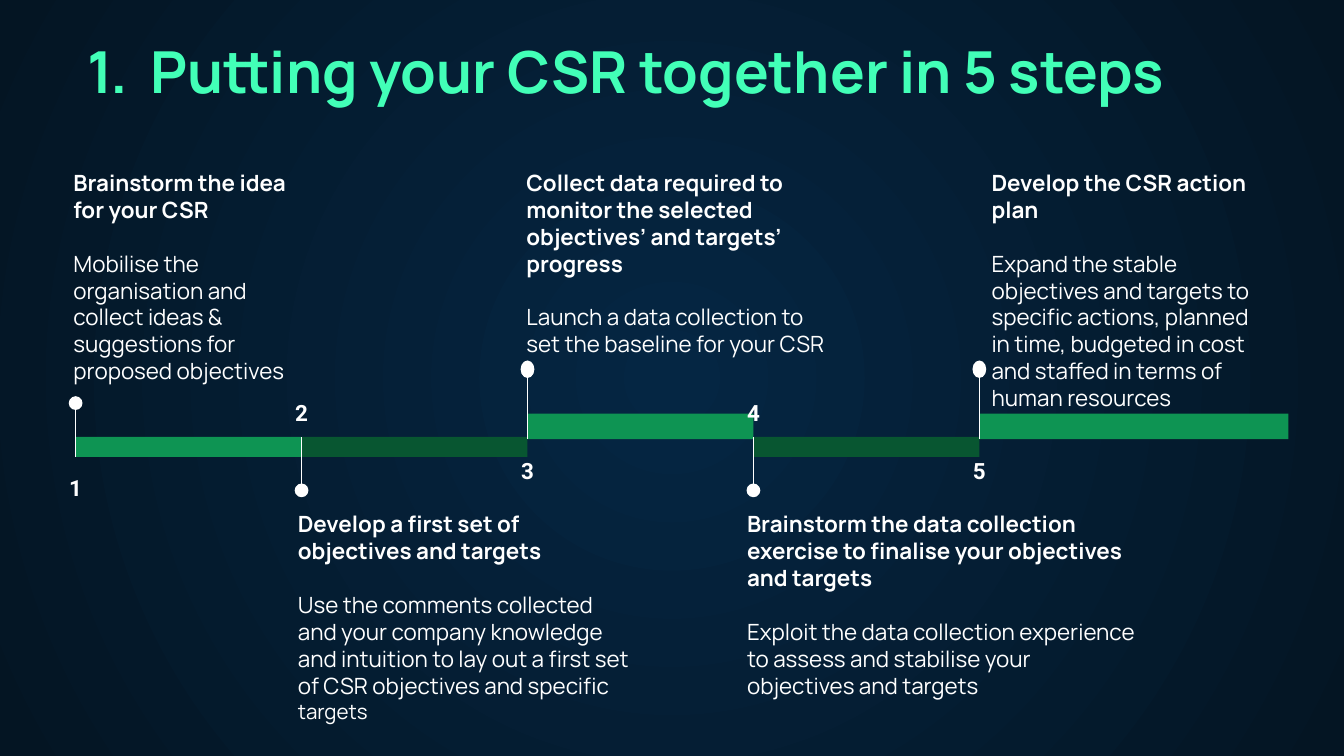
from dataclasses import dataclass
from typing import Optional

from lxml.etree import SubElement
from pptx import Presentation
from pptx.dml.color import RGBColor
from pptx.enum.shapes import MSO_CONNECTOR, MSO_SHAPE
from pptx.enum.text import MSO_ANCHOR, MSO_AUTO_SIZE, PP_ALIGN
from pptx.oxml.ns import qn
from pptx.slide import Slide
from pptx.text.text import TextFrame
from pptx.util import Cm, Pt


@dataclass(frozen=True)
class Theme:
    mint: str = "42FFB7"
    green: str = "0E9453"
    dark: str = "085631"
    white: str = "FFFFFF"
    glow: str = "052643"
    night: str = "041523"
    font: str = "Manrope"
    digit: str = "Roboto"
    head: float = 31
    body: float = 12
    small: float = 11
    stroke: float = 0.75


@dataclass(frozen=True)
class Level:
    color: str
    bar_top: float
    bar_high: float
    dot_mid: float
    dot_high: float
    stem_end: float
    num_top: float
    num_high: float
    text_top: float


@dataclass(frozen=True)
class Step:
    level: Level
    left: float
    width: float
    height: float
    title: str
    body: str
    tail: str = ""


THEME = Theme()
START = Level(THEME.green, 8.26, 0.38, 7.62, 0.26, 8.64, 8.64, 1.04, 2.95)
DROP = Level(THEME.dark, 8.26, 0.38, 9.27, 0.26, 8.26, 7.21, 1.04, 9.4)
RISE = Level(THEME.green, 7.82, 0.48, 6.98, 0.33, 8.3, 8.31, 1.35, 2.95)

STEPS = [
    Step(START, 1.14, 4.95, 4.52, "Brainstorm the idea for your CSR",
         "Mobilise the organisation and collect ideas & suggestions for "
         "proposed objectives"),
    Step(DROP, 5.38, 6.88, 4.14, "Develop a first set of objectives and targets",
         "Use the comments collected and your company knowledge and intuition "
         "to lay out a first set of CSR objectives and specific ", "targets"),
    Step(RISE, 9.7, 6.25, 3.81,
         "Collect data required to monitor the selected objectives’ and "
         "targets’ progress",
         "Launch a data collection to set the baseline for your CSR"),
    Step(DROP, 13.87, 7.85, 2.62,
         "Brainstorm the data collection exercise to finalise your objectives "
         "and targets",
         "Exploit the data collection experience to assess and stabilise your "
         "objectives and targets"),
    Step(RISE, 18.49, 5.64, 4.17, "Develop the CSR action plan",
         "Expand the stable objectives and targets to specific actions, planned "
         "in time, budgeted in cost and staffed in terms of human resources"),
]

FIRST, PITCH, LAST = 1.43, 4.27, 5.84
DOT, NUM = 0.26, 2.08


def write(frame: TextFrame, text: str, *, size: float = THEME.body,
          font: str = THEME.font, color: str = THEME.white, bold: bool = False,
          align: PP_ALIGN = PP_ALIGN.LEFT, lines: Optional[float] = None,
          after: float = 0, join: bool = False) -> None:
    para = frame.paragraphs[-1]
    if not join:
        if frame.text:
            para = frame.add_paragraph()
        para.alignment = align
        para.line_spacing = lines
        para.space_after = Pt(after)
    run = para.add_run()
    run.text = text
    run.font.size = Pt(size)
    run.font.name = font
    run.font.bold = bold
    run.font.color.rgb = RGBColor.from_string(color)


def set_frame(frame: TextFrame) -> TextFrame:
    frame.word_wrap = True
    frame.auto_size = MSO_AUTO_SIZE.NONE
    frame.vertical_anchor = MSO_ANCHOR.TOP
    frame.margin_left = frame.margin_right = Cm(0.25)
    frame.margin_top = frame.margin_bottom = Cm(0.25)
    return frame


def add_box(slide: Slide, left: float, top: float, width: float,
            height: float) -> TextFrame:
    box = slide.shapes.add_textbox(Cm(left), Cm(top), Cm(width), Cm(height))
    return set_frame(box.text_frame)


def add_form(slide: Slide, kind: MSO_SHAPE, left: float, top: float,
             width: float, height: float, color: str) -> None:
    form = slide.shapes.add_shape(kind, Cm(left), Cm(top), Cm(width), Cm(height))
    form.shadow.inherit = False
    form.fill.solid()
    form.fill.fore_color.rgb = RGBColor.from_string(color)
    form.line.fill.background()


def add_stem(slide: Slide, x: float, top: float, end: float) -> None:
    stem = slide.shapes.add_connector(
        MSO_CONNECTOR.STRAIGHT, Cm(x), Cm(top), Cm(x), Cm(end))
    stem.line.width = Pt(THEME.stroke)
    stem.line.color.rgb = RGBColor.from_string(THEME.white)
    SubElement(stem.element.spPr, qn("a:effectLst"))


def paint(slide: Slide) -> None:
    fill = slide.background.fill
    fill.gradient()
    for stop, color in zip(fill.gradient_stops, (THEME.glow, THEME.night)):
        stop.color.rgb = RGBColor.from_string(color)
    grad = slide.element.find(".//" + qn("a:gradFill"))
    grad.remove(grad.find(qn("a:lin")))
    ring = SubElement(grad, qn("a:path"), path="circle")
    SubElement(ring, qn("a:fillToRect"), dict.fromkeys("ltrb", "50000"))


def add_title(slide: Slide, text: str) -> None:
    title = slide.shapes.title
    title.left, title.top = Cm(1.32), Cm(0.43)
    title.width, title.height = Cm(22.78), Cm(2.9)
    frame = set_frame(title.text_frame)
    write(frame, text, size=THEME.head, color=THEME.mint, bold=True)
    props = frame.paragraphs[0]._p.get_or_add_pPr()
    props.set("marL", str(Cm(1.27)))
    props.set("indent", str(Cm(-1.19)))
    tint = SubElement(props, qn("a:buClr"))
    SubElement(tint, qn("a:srgbClr"), val=THEME.mint)
    SubElement(props, qn("a:buFont"), typeface=THEME.font)
    SubElement(props, qn("a:buAutoNum"), type="arabicPeriod")


def add_step(slide: Slide, index: int, step: Step) -> None:
    level = step.level
    x = FIRST + PITCH * index
    width = LAST if index == len(STEPS) - 1 else PITCH
    add_form(slide, MSO_SHAPE.RECTANGLE, x, level.bar_top, width,
             level.bar_high, level.color)
    add_stem(slide, x, level.dot_mid, level.stem_end)
    add_form(slide, MSO_SHAPE.OVAL, x - DOT / 2,
             level.dot_mid - level.dot_high / 2, DOT, level.dot_high, THEME.white)
    write(add_box(slide, x - NUM / 2, level.num_top, NUM, level.num_high),
          str(index + 1), font=THEME.digit, bold=True, align=PP_ALIGN.CENTER,
          lines=1.15, after=16)
    frame = add_box(slide, step.left, level.text_top, step.width, step.height)
    write(frame, step.title, bold=True, after=14.4)
    write(frame, step.body, after=16)
    if step.tail:
        write(frame, step.tail, size=THEME.small, join=True)


def main() -> None:
    deck = Presentation()
    deck.slide_width, deck.slide_height = Cm(25.4), Cm(14.29)
    slide = deck.slides.add_slide(deck.slide_layouts[5])
    paint(slide)
    add_title(slide, "Putting your CSR together in 5 steps")
    for index, step in enumerate(STEPS):
        add_step(slide, index, step)
    deck.save("out.pptx")


if __name__ == "__main__":
    main()
